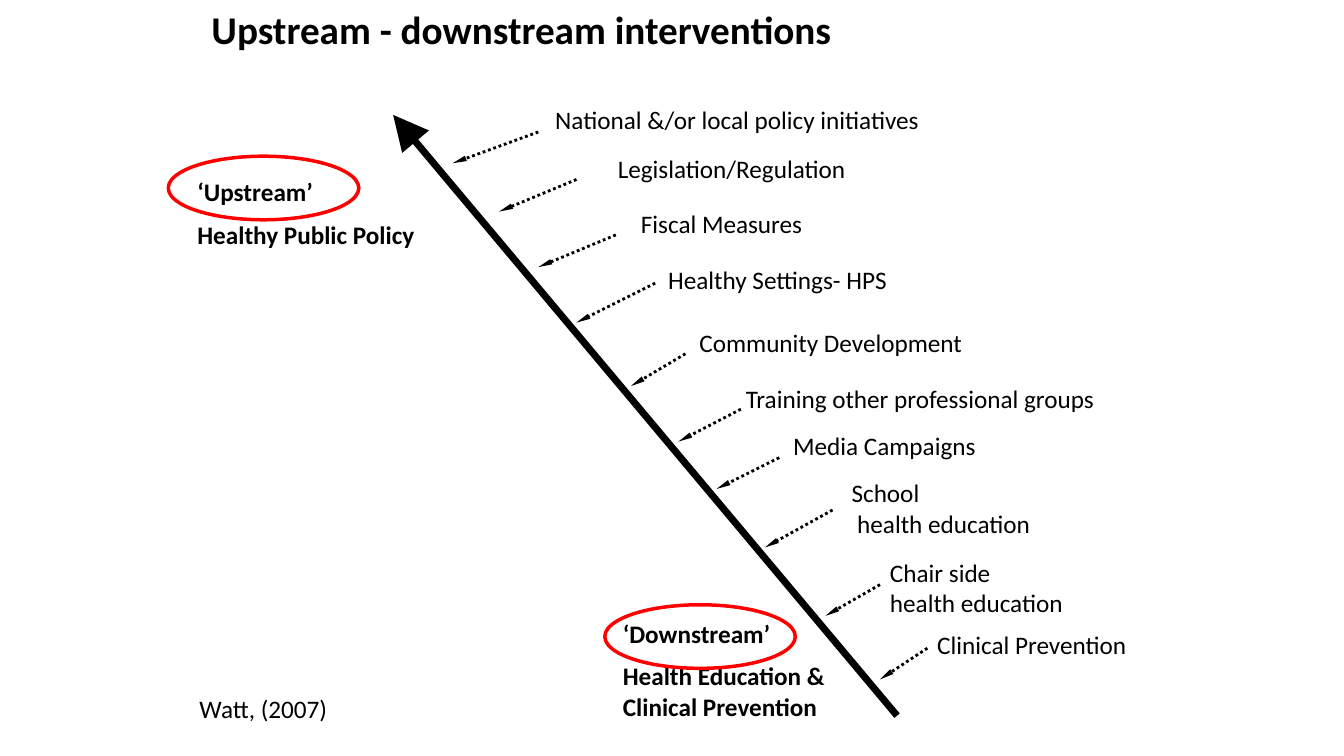
from lxml import etree
from pptx import Presentation
from pptx.dml.color import RGBColor
from pptx.enum.dml import MSO_LINE
from pptx.enum.shapes import MSO_CONNECTOR, MSO_SHAPE
from pptx.oxml.ns import qn
from pptx.util import Pt

BLACK = RGBColor(0x00, 0x00, 0x00)
RED = RGBColor(0xFF, 0x00, 0x00)

prs = Presentation()
prs.slide_width = Pt(960)
prs.slide_height = Pt(540)
s = prs.slides.add_slide(prs.slide_layouts[6])


def add_text(text, left, top, width, height=29, size=18, bold=False, wrap=True):
    tf = s.shapes.add_textbox(Pt(left), Pt(top), Pt(width), Pt(height)).text_frame
    tf.word_wrap = wrap
    tf.text = text
    for i, p in enumerate(tf.paragraphs):
        if i:
            p.space_before = Pt(size / 2)
        for r in p.runs:
            r.font.name = "Calibri"
            r.font.size = Pt(size)
            r.font.bold = bold
            r.font.color.rgb = BLACK


def add_arrow(x1, y1, x2, y2, weight, head_width, dash=None):
    c = s.shapes.add_connector(MSO_CONNECTOR.STRAIGHT, Pt(x1), Pt(y1), Pt(x2), Pt(y2))
    c.line.color.rgb = BLACK
    c.line.width = Pt(weight)
    if dash:
        c.line.dash_style = dash
    ln = c.line._get_or_add_ln()
    etree.SubElement(ln, qn("a:tailEnd"), type="triangle", w=head_width, len="lg")
    etree.SubElement(c._element.spPr, qn("a:effectLst"))


add_text("Upstream - downstream interventions", 144, 0, 564.5, 41, size=28, bold=True)

add_arrow(640.8, 511.2, 280.8, 82.1, 5, "lg")

interventions = [
    ("National &/or local policy initiatives", 389.5, 71.3, 306, (384.5, 94.3, 323.3, 116.6)),
    ("Legislation/Regulation", 434.2, 105.8, 194.4, (411.8, 128.2, 356.4, 151.2)),
    ("Fiscal Measures", 450.7, 145.4, 199.4, (439.9, 167.8, 384.5, 190.8)),
    ("Healthy Settings- HPS", 470.2, 185, 205.9, (468, 202.3, 411.8, 230.4)),
    ("Community Development", 492.5, 230.4, 249.8, (489.6, 252.7, 450.7, 275.8)),
    ("Training other professional groups", 525.6, 270, 294.5, (529.2, 292.3, 484.6, 315.4)),
    ("Media Campaigns", 559.4, 303.8, 172.1, (556.6, 326.9, 511.9, 349.2)),
    ("School\v health education", 601.2, 337.7, 161.3, (594.7, 364.3, 546.5, 391)),
    ("Chair side\vhealth education", 628.6, 394.6, 169.2, (628.6, 417.6, 589.7, 439.9)),
    ("Clinical Prevention", 662.4, 445.7, 177.8, (662.4, 463, 628.6, 485.3)),
]
for label, left, top, width, ends in interventions:
    add_text(label, left, top, width, height=51 if "\v" in label else 29)
    add_arrow(*ends, 2, "sm", MSO_LINE.ROUND_DOT)

add_text("‘Upstream’\nHealthy Public Policy", 133.9, 122.4, 232.6, 62, bold=True)
add_text("‘Downstream’\nHealth Education & Clinical Prevention", 437.8, 437.8, 200.2, 83.5, bold=True)

for left, top in [(120.2, 111.6), (432, 432)]:
    sp = s.shapes.add_shape(MSO_SHAPE.OVAL, Pt(left), Pt(top), Pt(136.1), Pt(45.4))
    sp.shadow.inherit = False
    sp.fill.background()
    sp.line.color.rgb = RED
    sp.line.width = Pt(2.5)

add_text("Watt, (2007)", 135.4, 491.8, 107.3, wrap=False)

prs.save("out.pptx")
